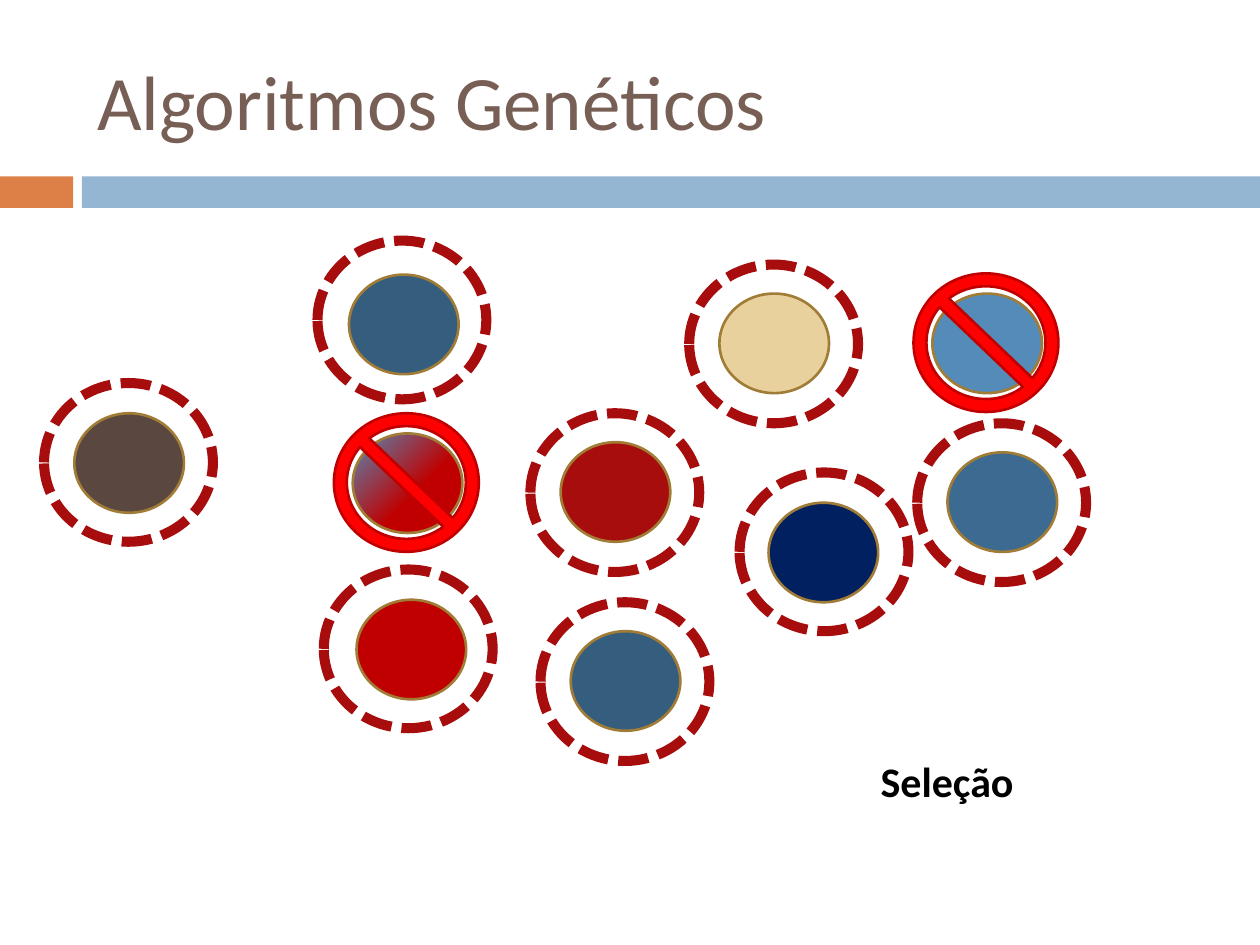
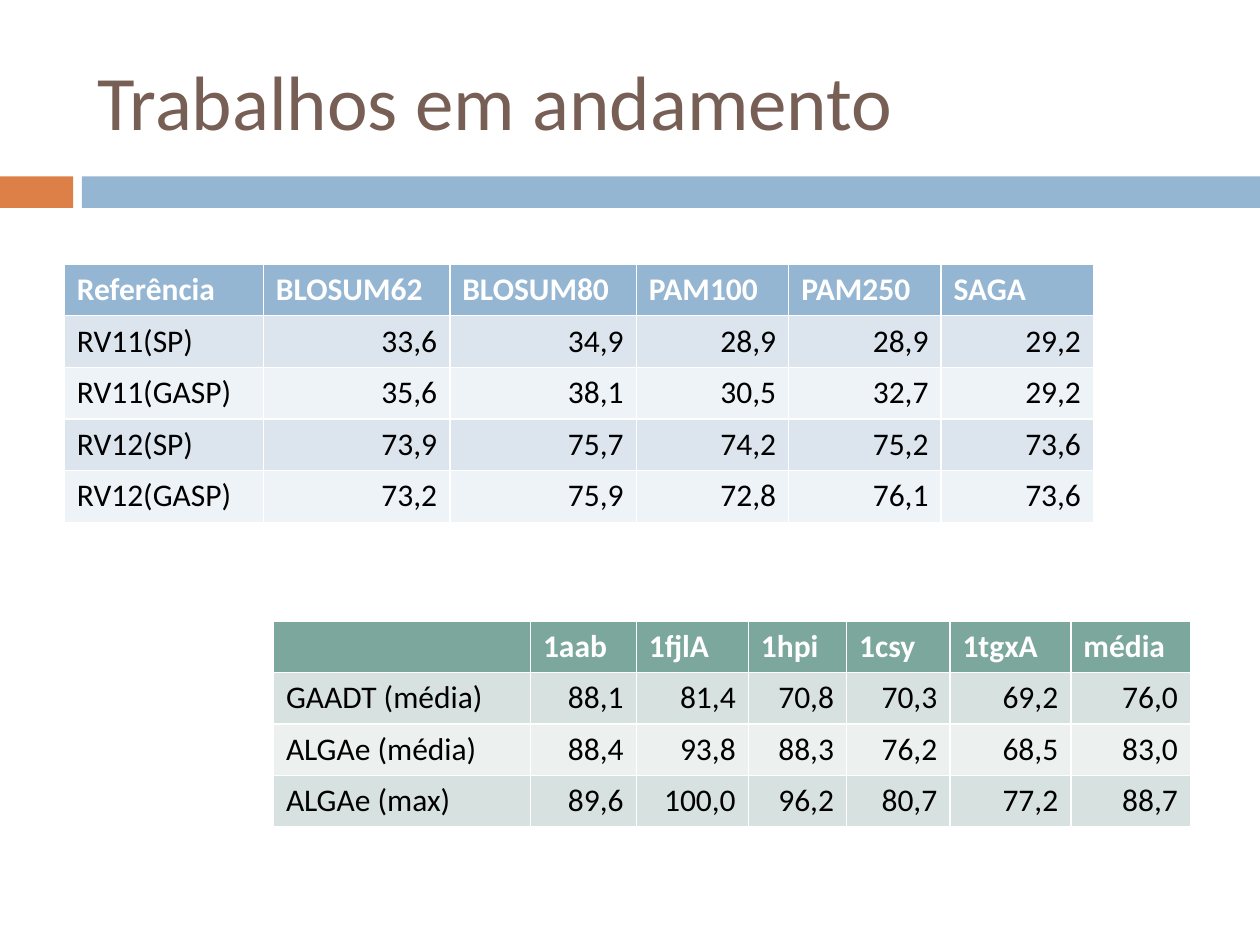
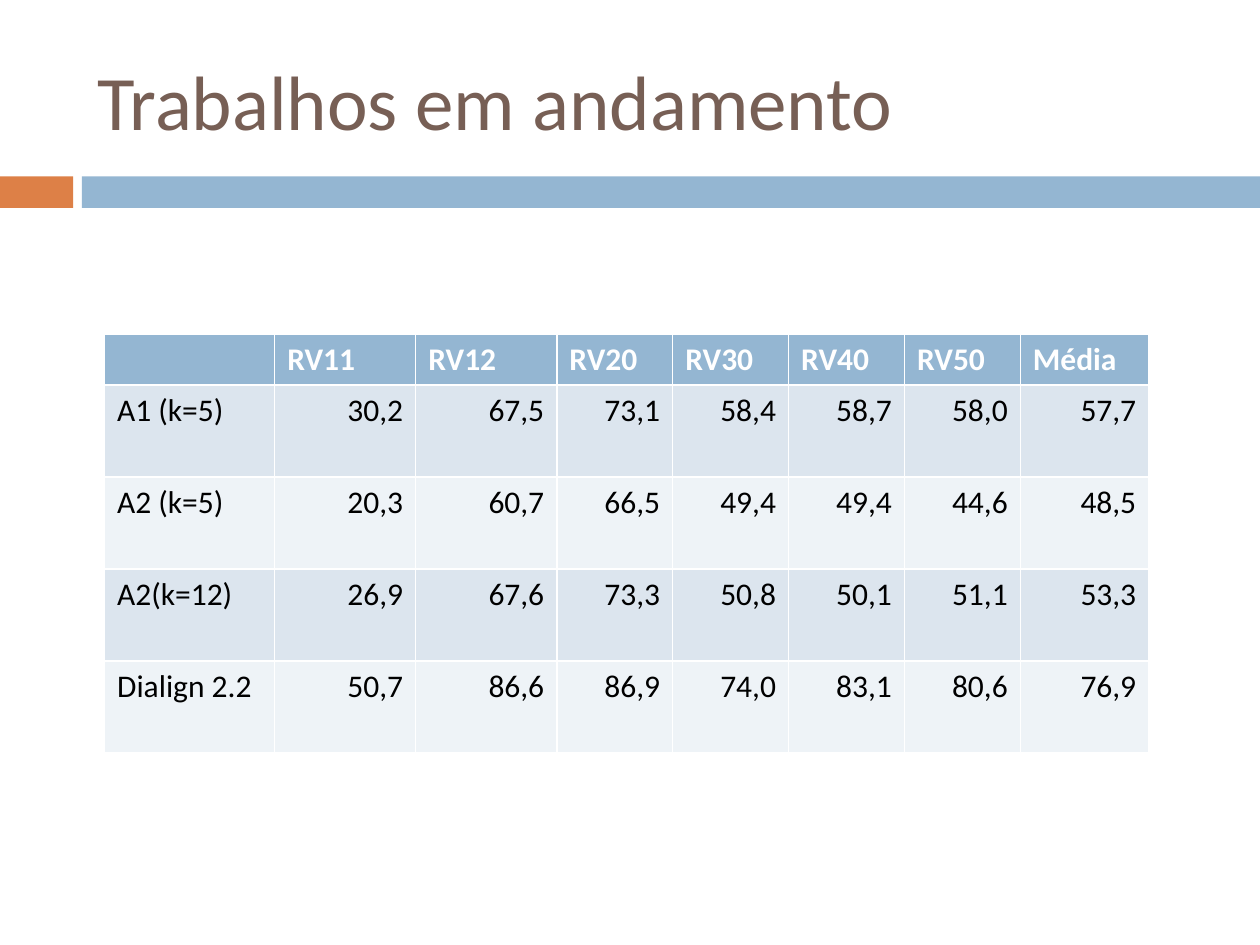
import pptx
import pptx.dml.color
import pptx.enum.dml
import pptx.enum.shapes
import pptx.enum.text
import pptx.oxml
import pptx.oxml.ns
import pptx.util

Inches = pptx.util.Inches
Pt = pptx.util.Pt
RGBColor = pptx.dml.color.RGBColor
Shape = pptx.enum.shapes.MSO_SHAPE
Align = pptx.enum.text.PP_ALIGN

# Style
FONT = "Calibri"
WHITE = RGBColor(0xFF, 0xFF, 0xFF)
BLACK = RGBColor(0x00, 0x00, 0x00)
BROWN = RGBColor(0x77, 0x5F, 0x55)
ORANGE = RGBColor(0xDD, 0x80, 0x47)
BLUE = RGBColor(0x94, 0xB6, 0xD2)
GOLD = RGBColor(0xA1, 0x7C, 0x36)
RED = RGBColor(0xFF, 0x00, 0x00)
CRIMSON = RGBColor(0xC0, 0x00, 0x00)
DARK_RED = RGBColor(0xA7, 0x0D, 0x0D)
STEEL = RGBColor(0x35, 0x5D, 0x7E)
SEA = RGBColor(0x3C, 0x6A, 0x90)
SKY = RGBColor(0x55, 0x8B, 0xB8)
SAND = RGBColor(0xE8, 0xD1, 0x9D)
NAVY = RGBColor(0x00, 0x20, 0x60)
UMBER = RGBColor(0x59, 0x47, 0x40)

# Table colours: header, odd rows, even rows
BLUE_BANDS = (BLUE, RGBColor(0xDC, 0xE5, 0xEE), RGBColor(0xEE, 0xF3, 0xF7))
GREEN_BANDS = (RGBColor(0x7B, 0xA7, 0x9D), RGBColor(0xD7, 0xE1, 0xDF),
               RGBColor(0xEC, 0xF1, 0xEF))


class Builder:
    """Holds the deck, its style and the current page."""

    def __init__(self):
        self.deck = pptx.Presentation()
        self.deck.slide_width = Inches(10)
        self.deck.slide_height = Inches(7.5)
        self.page = None

    def start_page(self, title):
        self.page = self.deck.slides.add_slide(self.deck.slide_layouts[5])
        self.shape(Shape.RECTANGLE, 0, 1.4, 0.58, 0.25, ORANGE)
        self.shape(Shape.RECTANGLE, 0.65, 1.4, 9.35, 0.25, BLUE)
        box = self.page.shapes.title
        box.left, box.top = Inches(0.67), Inches(0.25)
        box.width, box.height = Inches(8.92), Inches(1.08)
        frame = box.text_frame
        frame.auto_size = pptx.enum.text.MSO_AUTO_SIZE.NONE
        frame.vertical_anchor = pptx.enum.text.MSO_ANCHOR.MIDDLE
        self.set_text(frame, title, 44, BROWN)

    def set_text(self, frame, text, size, color, bold=False, align=Align.LEFT):
        para = frame.paragraphs[0]
        para.text = text
        para.alignment = align
        para.font.name = FONT
        para.font.size = Pt(size)
        para.font.bold = bold
        para.font.color.rgb = color

    def shape(self, kind, left, top, width, height, fill=None, line=None, weight=1.5):
        shape = self.page.shapes.add_shape(
            kind, Inches(left), Inches(top), Inches(width), Inches(height))
        shape.shadow.inherit = False
        if fill is None:
            shape.fill.background()
        else:
            shape.fill.solid()
            shape.fill.fore_color.rgb = fill
        if line is None:
            shape.line.fill.background()
        else:
            shape.line.color.rgb = line
            shape.line.width = Pt(weight)
        return shape

    def individual(self, left, top, fill):
        return self.shape(Shape.OVAL, left, top, 0.87, 0.79, fill, GOLD)

    def mixed_individual(self, left, top, inner, outer):
        shape = self.individual(left, top, inner)
        shape.fill.gradient()
        for stop, position, color in zip(shape.fill.gradient_stops, (0.41, 1), (inner, outer)):
            stop.position = position
            stop.color.rgb = color
        # Radial gradient centred on the lower right corner
        qn = pptx.oxml.ns.qn
        gradient = shape.element.spPr.find(qn("a:gradFill"))
        radial = pptx.oxml.parse_xml(
            f'<a:path {pptx.oxml.ns.nsdecls("a")} path="circle">'
            '<a:fillToRect l="100000" t="100000"/></a:path>')
        gradient.replace(gradient.find(qn("a:lin")), radial)

    def selected_ring(self, left, top):
        ring = self.shape(Shape.OVAL, left, top, 1.34, 1.26, None, DARK_RED, 5.75)
        ring.line.dash_style = pptx.enum.dml.MSO_LINE.SQUARE_DOT

    def rejected_sign(self, left, top):
        sign = self.shape(Shape.NO_SYMBOL, left, top, 1.15, 1.1, RED, CRIMSON)
        sign.adjustments[0] = 0.093

    def label(self, text, left, top, width, height):
        box = self.page.shapes.add_textbox(
            Inches(left), Inches(top), Inches(width), Inches(height))
        box.text_frame.word_wrap = True
        self.set_text(box.text_frame, text, 24, BLACK, bold=True)

    def table(self, left, top, widths, header_height, row_height, bands, rows):
        heights = [header_height] + [row_height] * (len(rows) - 1)
        table = self.page.shapes.add_table(
            len(rows), len(widths), Inches(left), Inches(top),
            Inches(sum(widths)), Inches(sum(heights))).table
        for column, width in zip(table.columns, widths):
            column.width = Inches(width)
        for r, (values, height) in enumerate(zip(rows, heights)):
            table.rows[r].height = Inches(height)
            header = r == 0
            for c, value in enumerate(values):
                cell = table.cell(r, c)
                cell.fill.solid()
                cell.fill.fore_color.rgb = bands[0] if header else bands[2 - r % 2]
                self.set_text(cell.text_frame, value, 18, WHITE if header else BLACK, header,
                              Align.LEFT if header or c == 0 else Align.RIGHT)


def selection_page(builder):
    builder.start_page("Algoritmos Genéticos")

    # Population
    builder.mixed_individual(2.8, 3.44, CRIMSON, SKY)
    for left, top, fill in (
            (2.77, 2.18, STEEL), (4.45, 3.51, DARK_RED), (2.83, 4.76, CRIMSON),
            (5.71, 2.33, SAND), (6.1, 3.99, NAVY), (4.53, 5.01, STEEL),
            (0.59, 3.28, UMBER), (7.52, 3.59, SEA), (7.4, 2.33, SKY)):
        builder.individual(left, top, fill)
    builder.label("Seleção", 6.89, 5.95, 2.05, 0.5)

    # Selected and rejected individuals
    for left, top in ((0.35, 3.04), (2.52, 1.91), (4.29, 4.78), (7.28, 3.36),
                      (4.21, 3.28), (5.47, 2.1), (2.57, 4.52), (5.87, 3.75)):
        builder.selected_ring(left, top)
    for left, top in ((2.65, 3.28), (7.25, 2.17)):
        builder.rejected_sign(left, top)


def matrices_page(builder):
    builder.start_page("Trabalhos em andamento")
    builder.table(0.51, 2.1, [1.58] + [1.48] * 2 + [1.21] * 3, 0.32, 0.41, BLUE_BANDS, (
        ("Referência", "BLOSUM62", "BLOSUM80", "PAM100", "PAM250", "SAGA"),
        ("RV11(SP)", "33,6", "34,9", "28,9", "28,9", "29,2"),
        ("RV11(GASP)", "35,6", "38,1", "30,5", "32,7", "29,2"),
        ("RV12(SP)", "73,9", "75,7", "74,2", "75,2", "73,6"),
        ("RV12(GASP)", "73,2", "75,9", "72,8", "76,1", "73,6")))
    builder.table(2.17, 4.93, [2.04, 0.84, 0.89, 0.78, 0.82, 0.96, 0.95], 0.33, 0.41,
                  GREEN_BANDS, (
        ("", "1aab", "1fjlA", "1hpi", "1csy", "1tgxA", "média"),
        ("GAADT (média)", "88,1", "81,4", "70,8", "70,3", "69,2", "76,0"),
        ("ALGAe (média)", "88,4", "93,8", "88,3", "76,2", "68,5", "83,0"),
        ("ALGAe (max)", "89,6", "100,0", "96,2", "80,7", "77,2", "88,7")))


def alignment_page(builder):
    builder.start_page("Trabalhos em andamento")
    builder.table(0.83, 2.65, [1.35] + [1.12] * 2 + [0.92] * 4 + [1.02], 0.39, 0.73,
                  BLUE_BANDS, (
        ("", "RV11", "RV12", "RV20", "RV30", "RV40", "RV50", "Média"),
        ("A1 (k=5)", "30,2", "67,5", "73,1", "58,4", "58,7", "58,0", "57,7"),
        ("A2 (k=5)", "20,3", "60,7", "66,5", "49,4", "49,4", "44,6", "48,5"),
        ("A2(k=12)", "26,9", "67,6", "73,3", "50,8", "50,1", "51,1", "53,3"),
        ("Dialign 2.2", "50,7", "86,6", "86,9", "74,0", "83,1", "80,6", "76,9")))


def main():
    builder = Builder()
    selection_page(builder)
    matrices_page(builder)
    alignment_page(builder)
    builder.deck.save("out.pptx")


if __name__ == "__main__":
    main()
